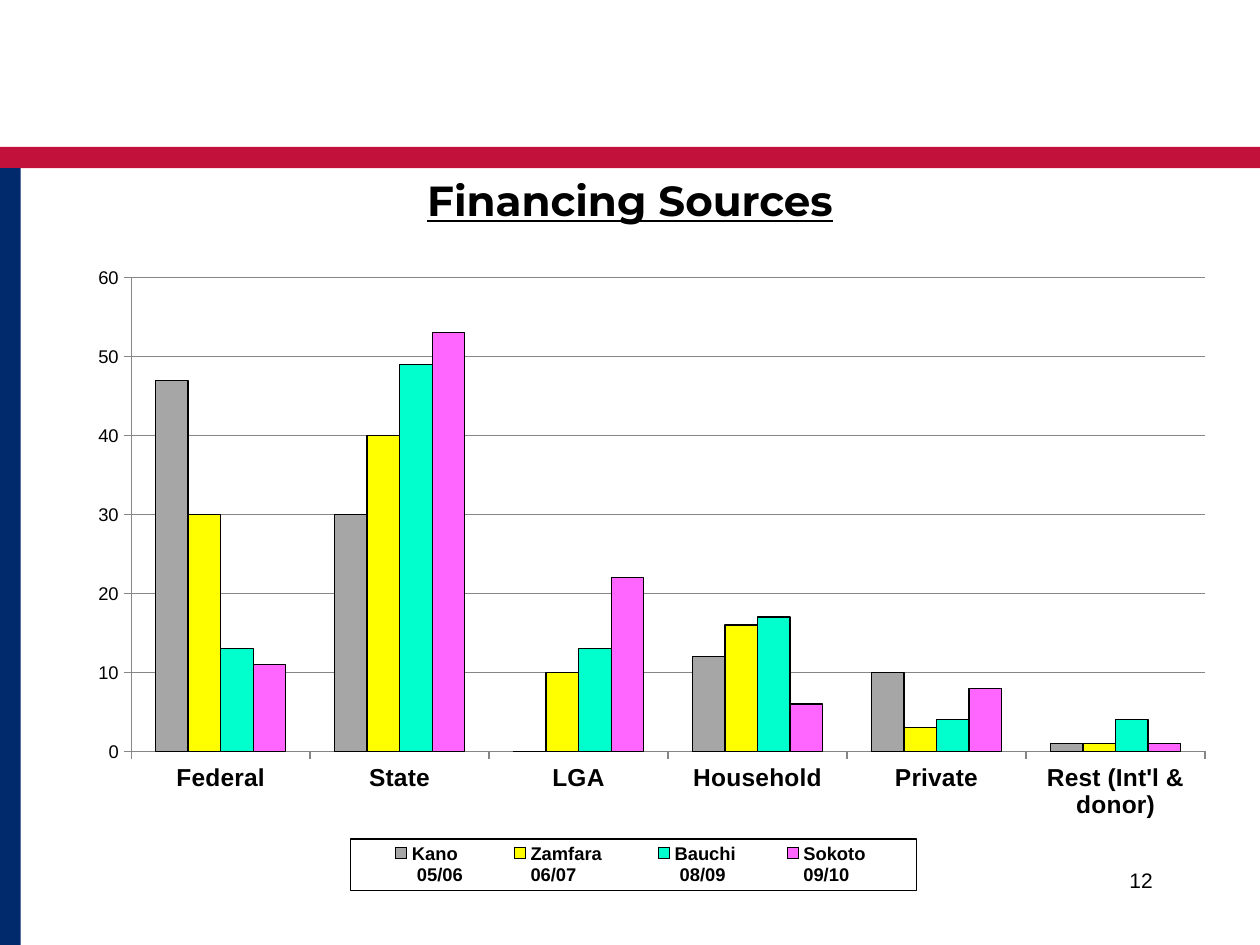
from pptx import Presentation
from pptx.chart.data import CategoryChartData
from pptx.dml.color import RGBColor
from pptx.enum.chart import XL_CHART_TYPE as CT, XL_LEGEND_POSITION as LP, XL_TICK_MARK as TM
from pptx.enum.shapes import MSO_SHAPE as SHAPE
from pptx.enum.text import PP_ALIGN as AL
from pptx.oxml import parse_xml
from pptx.oxml.ns import nsdecls
from pptx.util import Cm, Pt


def rgb(value):
    return RGBColor.from_string(value)


def manual_layout(x, y, w, h, inner=False):
    """Chart layout element, in fractions of the chart frame."""
    target = '<c:layoutTarget val="inner"/>' if inner else ""
    return parse_xml(
        f'<c:layout {nsdecls("c")}><c:manualLayout>{target}'
        '<c:xMode val="edge"/><c:yMode val="edge"/>'
        f'<c:x val="{x}"/><c:y val="{y}"/><c:w val="{w}"/><c:h val="{h}"/>'
        "</c:manualLayout></c:layout>")


class Deck:
    black, grey = "000000", "868686"
    body, heading = "Arial", "Montserrat"

    def __init__(self, prs):
        self.s = prs.slides.add_slide(prs.slide_layouts[6])

    def bar(self, x, y, w, h, color):
        sp = self.s.shapes.add_shape(SHAPE.RECTANGLE, Cm(x), Cm(y), Cm(w), Cm(h))
        sp.shadow.inherit = False
        sp.fill.solid()
        sp.fill.fore_color.rgb = rgb(color)
        sp.line.fill.background()

    def font(self, f, size, name=body, bold=False):
        f.size, f.name, f.bold = Pt(size), name, bold
        f.color.rgb = rgb(self.black)

    def text(self, x, y, w, h, words, size, align, name=body, bold=False, underline=False):
        tf = self.s.shapes.add_textbox(Cm(x), Cm(y), Cm(w), Cm(h)).text_frame
        tf.word_wrap = True
        p = tf.paragraphs[0]
        p.alignment = align
        r = p.add_run()
        r.text = words
        self.font(r.font, size, name, bold)
        r.font.underline = underline

    def columns(self, x, y, w, h, cats, series):
        data = CategoryChartData(number_format="General")
        data.categories = cats
        for name, _, values in series:
            data.add_series(name, values)
        chart = self.s.shapes.add_chart(
            CT.COLUMN_CLUSTERED, Cm(x), Cm(y), Cm(w), Cm(h), data).chart
        chart.has_title = False
        self.font(chart.font, 10.5)
        plot = chart.plots[0]
        plot.vary_by_categories = False
        plot.gap_width, plot.overlap = 150, 0
        for ser, (_, color, _) in zip(plot.series, series):
            ser.format.fill.solid()
            ser.format.fill.fore_color.rgb = rgb(color)
            self.line(ser.format.line, self.black)
        self.axes(chart)
        self.legend(chart)
        area = chart._chartSpace.chart.plotArea
        for old in area.xpath("c:layout"):
            area.remove(old)
        area.insert(0, manual_layout(0.05, 0.04, 0.93, 0.74, inner=True))

    def line(self, line, color):
        line.color.rgb = rgb(color)
        line.width = Pt(0.75)

    def axes(self, chart):
        cat, val = chart.category_axis, chart.value_axis
        for axis in (cat, val):
            axis.major_tick_mark, axis.minor_tick_mark = TM.OUTSIDE, TM.NONE
            self.line(axis.format.line, self.grey)
        self.font(cat.tick_labels.font, 14, bold=True)
        val.minimum_scale, val.maximum_scale, val.major_unit = 0, 60, 10
        val.has_major_gridlines = True
        self.line(val.major_gridlines.format.line, self.grey)
        val.tick_labels.number_format = "#,##0"
        val.tick_labels.number_format_is_linked = False

    def legend(self, chart):
        chart.has_legend = True
        legend = chart.legend
        legend.position = LP.BOTTOM
        legend.include_in_layout = False
        self.font(legend.font, 10.5, bold=True)
        overlay = chart._chartSpace.xpath("c:chart/c:legend/c:overlay")[0]
        overlay.addprevious(manual_layout(0.24, 0.92, 0.49, 0.08))
        overlay.addnext(parse_xml(
            f'<c:spPr {nsdecls("c", "a")}><a:ln w="{Pt(0.75)}"><a:solidFill>'
            f'<a:srgbClr val="{self.black}"/></a:solidFill></a:ln></c:spPr>'))


def main():
    prs = Presentation()
    prs.slide_width, prs.slide_height = Cm(25.4), Cm(19.05)
    deck = Deck(prs)
    deck.bar(0, 2.96, 25.4, 0.43, "C2113A")
    deck.bar(0, 3.39, 0.42, 15.66, "002A6C")
    deck.text(1.9, 3.39, 21.6, 1.69, "Financing Sources", 24, AL.CENTER,
              Deck.heading, bold=True, underline=True)
    deck.columns(
        1.48, 5.08, 23.28, 12.91,
        ["Federal", "State", "LGA", "Household", "Private", "Rest (Int'l & donor)"],
        [("Kano\n 05/06", "A6A6A6", (47, 30, 0, 12, 10, 1)),
         ("Zamfara \n06/07", "FFFF00", (30, 40, 10, 16, 3, 1)),
         ("Bauchi\n 08/09", "00FFCC", (13, 49, 13, 17, 4, 4)),
         ("Sokoto \n09/10", "FF66FF", (11, 53, 22, 6, 8, 1))])
    deck.text(18.2, 17.36, 5.29, 1.27, "12", 12, AL.RIGHT)
    prs.save("out.pptx")


if __name__ == "__main__":
    main()
